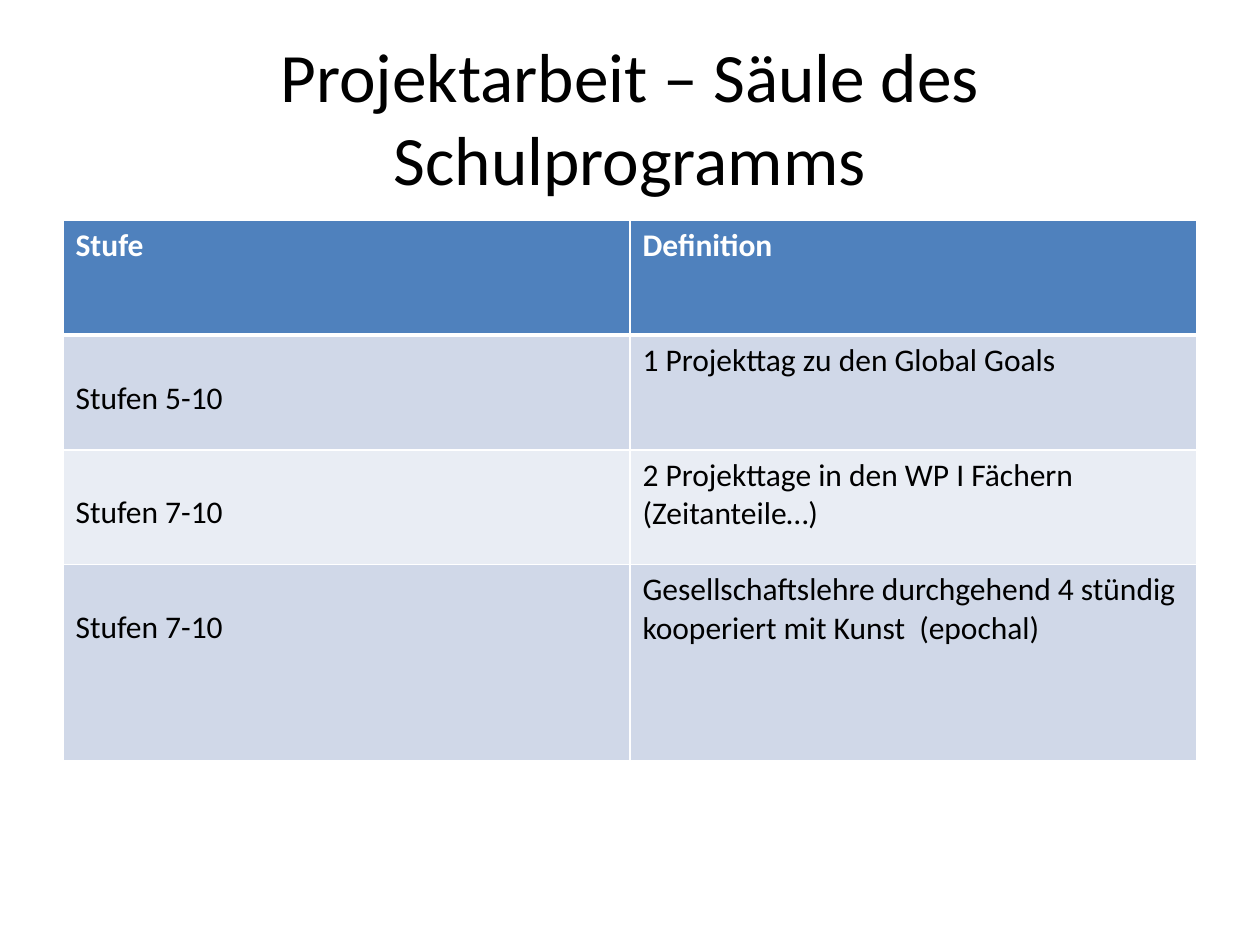
import pptx
import pptx.dml.color
import pptx.enum.text
import pptx.oxml
import pptx.oxml.ns
import pptx.util
from pptx.util import Inches

BLACK = pptx.dml.color.RGBColor(0x00, 0x00, 0x00)
WHITE = pptx.dml.color.RGBColor(0xFF, 0xFF, 0xFF)
HEADER_BLUE = pptx.dml.color.RGBColor(0x4F, 0x81, 0xBD)
DARK_BAND = pptx.dml.color.RGBColor(0xD0, 0xD8, 0xE8)
LIGHT_BAND = pptx.dml.color.RGBColor(0xE9, 0xED, 0xF4)

TITLE_FORMAT = {"name": "Calibri", "size": pptx.util.Pt(39.6), "bold": False}
HEADER_FORMAT = {"name": "Calibri", "size": pptx.util.Pt(18), "bold": True}
BODY_FORMAT = {**HEADER_FORMAT, "bold": False}

LEVELS = [
    ("Stufe", "Definition"),
    ("Stufen 5-10", "1 Projekttag zu den Global Goals"),
    ("Stufen 7-10", "2 Projekttage in den WP I Fächern\n(Zeitanteile…)"),
    ("Stufen 7-10", "Gesellschaftslehre durchgehend 4 stündig kooperiert mit Kunst  (epochal)"),
]
ROW_HEIGHTS = [0.91, 0.91, 0.91, 1.56]


def write(frame, text, font_format, color):
    frame.text = text
    for paragraph in frame.paragraphs:
        for run in paragraph.runs:
            for key, value in font_format.items():
                setattr(run.font, key, value)
            run.font.color.rgb = color


def add_border(cell, side, points):
    line = pptx.oxml.parse_xml(
        f'<a:ln{side} {pptx.oxml.ns.nsdecls("a")} w="{pptx.util.Pt(points)}">'
        f'<a:solidFill><a:srgbClr val="{WHITE}"/></a:solidFill></a:ln{side}>'
    )
    cell._tc.get_or_add_tcPr().append(line)


presentation = pptx.Presentation()
presentation.slide_width = Inches(10)
presentation.slide_height = Inches(7.5)
slide = presentation.slides.add_slide(presentation.slide_layouts[6])

title = slide.shapes.add_textbox(Inches(0.5), Inches(0.3), Inches(9), Inches(1.25)).text_frame
title.word_wrap = True
title.vertical_anchor = pptx.enum.text.MSO_ANCHOR.MIDDLE
write(title, "Projektarbeit – Säule des Schulprogramms", TITLE_FORMAT, BLACK)
title.paragraphs[0].alignment = pptx.enum.text.PP_ALIGN.CENTER

levels = slide.shapes.add_table(
    len(LEVELS), 2, Inches(0.5), Inches(1.75), Inches(9), Inches(sum(ROW_HEIGHTS))
).table

for row, (entries, height) in enumerate(zip(LEVELS, ROW_HEIGHTS)):
    levels.rows[row].height = Inches(height)
    is_header = row == 0
    band = HEADER_BLUE if is_header else DARK_BAND if row % 2 else LIGHT_BAND
    for column, entry in enumerate(entries):
        cell = levels.cell(row, column)
        write(
            cell.text_frame,
            entry,
            HEADER_FORMAT if is_header else BODY_FORMAT,
            WHITE if is_header else BLACK,
        )
        if column == 0 and not is_header:
            cell.margin_top = Inches(0.35)
        for side in "LRTB":
            thick = (row, side) in ((0, "B"), (1, "T"))
            add_border(cell, side, 3 if thick else 1)
        cell.fill.solid()
        cell.fill.fore_color.rgb = band

presentation.save("out.pptx")
